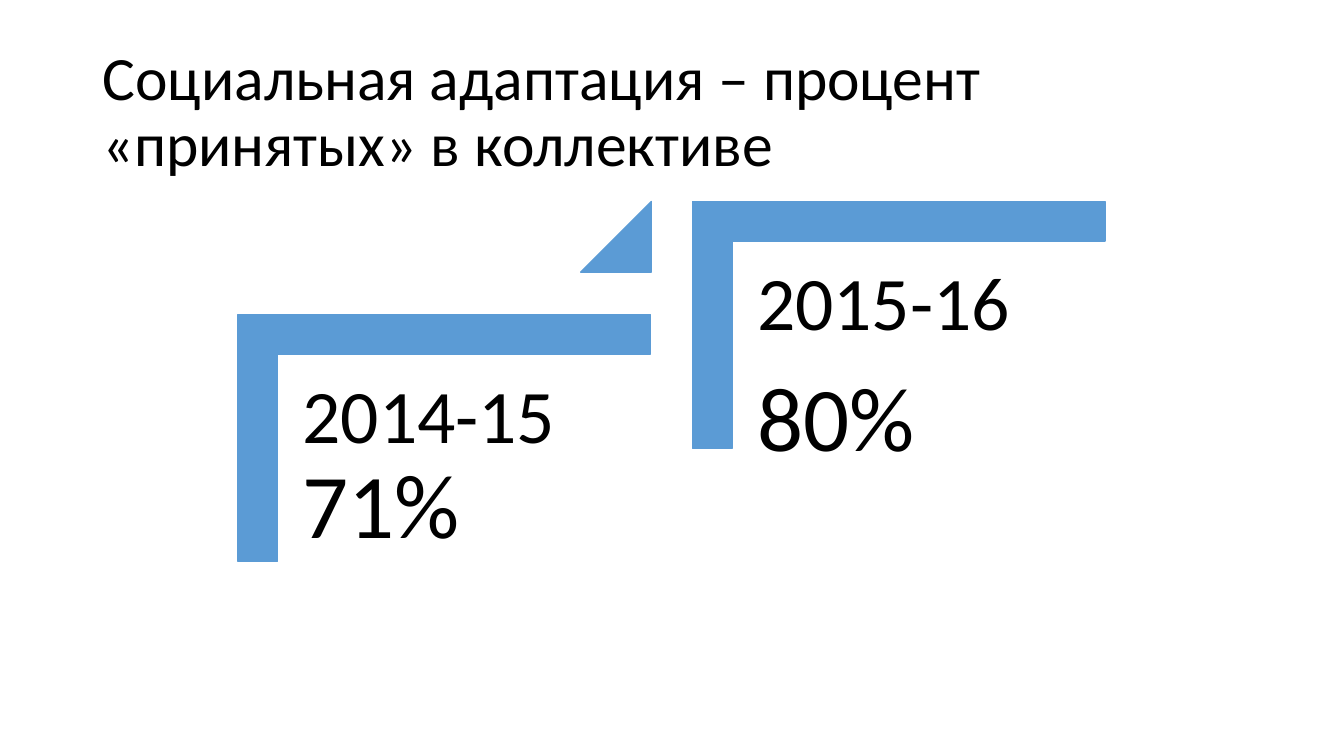
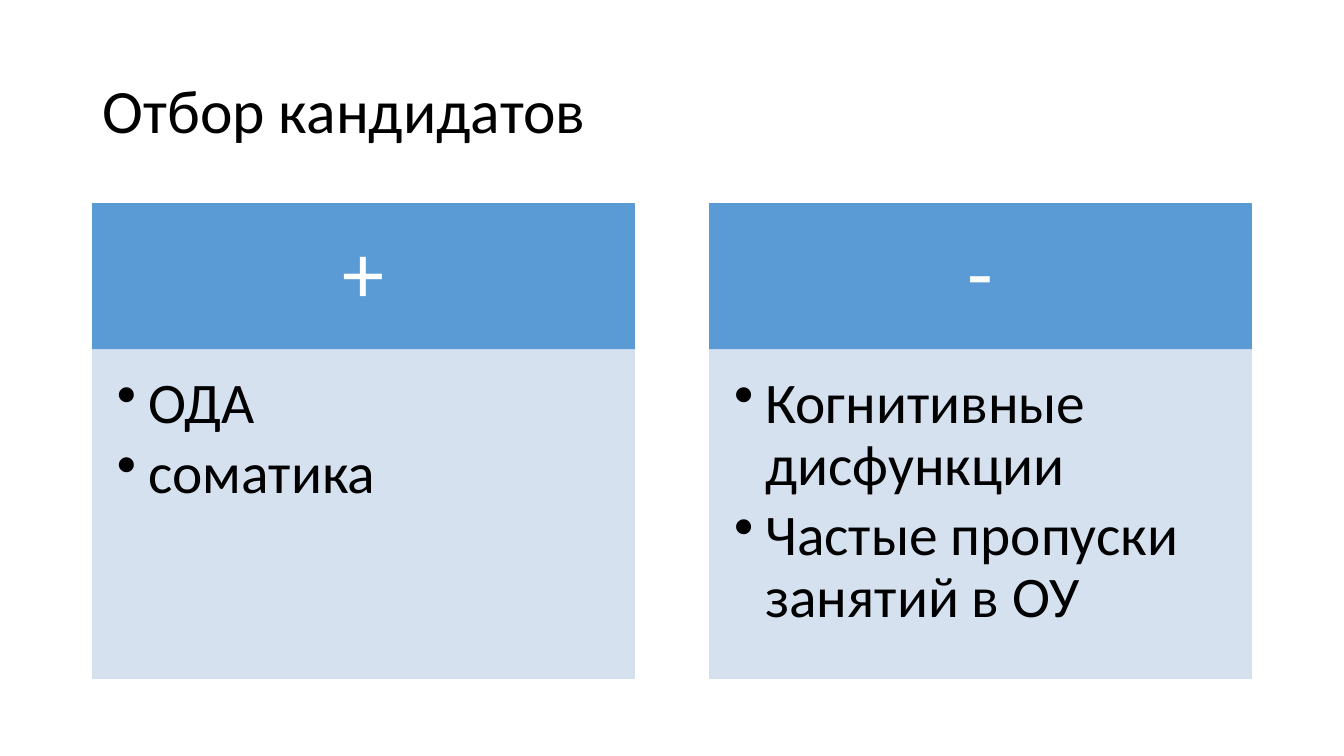
"""Two slides: social adaptation by school year, and selection of candidates."""
import pptx
import pptx.util
import pptx.dml.color
import pptx.enum.shapes
import pptx.enum.text
import lxml.etree
from pptx.oxml.ns import qn

Inches, Pt = pptx.util.Inches, pptx.util.Pt
SHAPE = pptx.enum.shapes.MSO_SHAPE
ANCHOR = pptx.enum.text.MSO_ANCHOR
ALIGN = pptx.enum.text.PP_ALIGN
FONT = "Calibri"
COLORS = {"text": "000000", "white": "FFFFFF", "blue": "5B9BD5", "pale": "D2DEEF"}


def add_block(s, kind, x, y, w, h, color):
    sp = s.shapes.add_shape(kind, Inches(x), Inches(y), Inches(w), Inches(h))
    sp.shadow.inherit = False
    sp.fill.solid()
    sp.line.fill.solid()
    sp.line.width = Pt(1)
    for fill in (sp.fill, sp.line.fill):
        fill.fore_color.rgb = pptx.dml.color.RGBColor.from_string(COLORS[color])
    return sp


def write(sp, lines, insets, color="text", anchor=ANCHOR.TOP, align=ALIGN.LEFT, gap=0):
    tf = sp.text_frame
    tf.word_wrap = True
    tf.vertical_anchor = anchor
    tf.margin_left, tf.margin_top, tf.margin_right, tf.margin_bottom = map(Inches, insets)
    for i, (text, size) in enumerate(lines):
        p = tf.add_paragraph() if i else tf.paragraphs[0]
        p.text = text
        p.alignment = align
        p.line_spacing = 0.9
        p.space_after = Pt(gap)
        p.font.name = FONT
        p.font.size = Pt(size)
        p.font.color.rgb = pptx.dml.color.RGBColor.from_string(COLORS[color])
    return tf


prs = pptx.Presentation()
prs.slide_width, prs.slide_height = Inches(13.33), Inches(7.5)

slides = []
for title in ("Социальная адаптация – процент «принятых» в коллективе", "Отбор кандидатов"):
    s = prs.slides.add_slide(prs.slide_layouts[6])
    sp = s.shapes.add_textbox(Inches(0.92), Inches(0.4), Inches(11.5), Inches(1.45))
    write(sp, [(title, 44)], (0.1, 0.05, 0.1, 0.05), anchor=ANCHOR.MIDDLE)
    slides.append(s)
adaptation, selection = slides

steps = [(2.77, 3.52, "2014-15", "71%", 0), (7.28, 2.4, "2015-16", "80%", 19)]
for x, y, year, share, gap in steps:
    corner = add_block(adaptation, SHAPE.CORNER, x + 0.41, y - 1.22, 2.45, 4.09, "blue")
    corner.rotation = 90
    corner.adjustments[0] = corner.adjustments[1] = 0.16
    sp = adaptation.shapes.add_textbox(Inches(x), Inches(y), Inches(3.69), Inches(3.23))
    write(sp, [(year, 54), (share, 65)], [0.23] * 4, gap=gap)
triangle = add_block(adaptation, SHAPE.ISOSCELES_TRIANGLE, 5.76, 2, 0.7, 0.7, "blue")
triangle.adjustments[0] = 1

columns = [
    ("+", ["ОДА", "соматика"]),
    ("-", ["Когнитивные дисфункции", "Частые пропуски занятий в ОУ"]),
]
for i, (sign, points) in enumerate(columns):
    x = 0.92 + i * 6.12
    head = add_block(selection, SHAPE.RECTANGLE, x, 2.02, 5.37, 1.45, "blue")
    write(head, [(sign, 60)], (0.47, 0.27, 0.47, 0.27), "white", ANCHOR.MIDDLE, ALIGN.CENTER)
    body = add_block(selection, SHAPE.RECTANGLE, x, 3.47, 5.37, 3.26, "pale")
    for clr in body.element.spPr.iter(qn("a:srgbClr")):
        lxml.etree.SubElement(clr, qn("a:alpha"), val="90000")
    tf = write(body, [(point, 41) for point in points], (0.24, 0.24, 0.32, 0.36), gap=6)
    for p in tf.paragraphs:
        pPr = p._p.get_or_add_pPr()
        pPr.set("marL", str(Inches(0.31)))
        pPr.set("indent", str(-Inches(0.31)))
        bullet = lxml.etree.Element(qn("a:buChar"), char="•")
        pPr.find(qn("a:defRPr")).addprevious(bullet)

prs.save("out.pptx")
